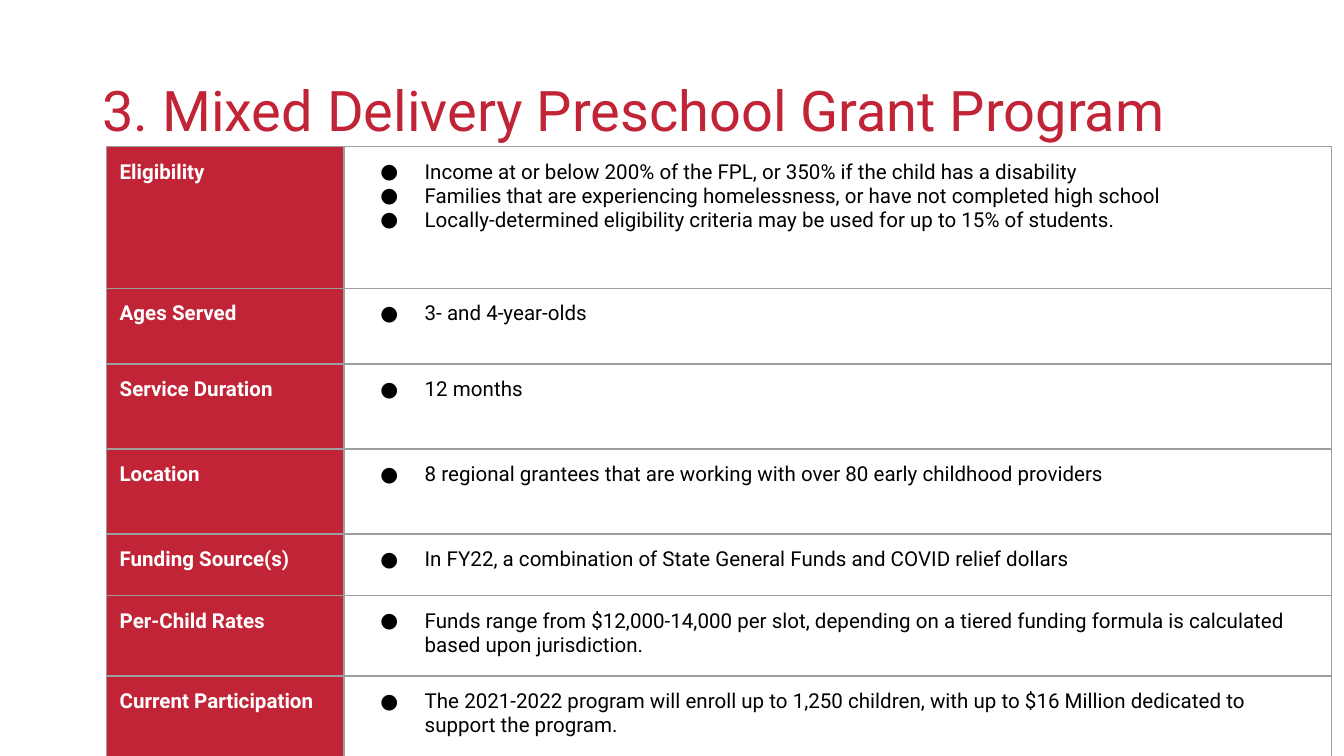
from lxml.etree import SubElement
from pptx import Presentation
from pptx.dml.color import RGBColor
from pptx.enum.text import MSO_ANCHOR as Anchor
from pptx.oxml import parse_xml
from pptx.oxml.ns import nsdecls, qn
from pptx.util import Inches, Pt

SLIDE_WIDTH = 10
SLIDE_HEIGHT = SLIDE_WIDTH * 9 / 16
RED, WHITE, BLACK, GREY = "C12436", "FFFFFF", "000000", "9E9E9E"
FONT = "Roboto"
TABLE_TEXT_SIZE = 11
COLUMN_SHARES = [17.7, 73.5]

PROGRAM_FACTS = [
    ("Eligibility", 18.75, [
        "Income at or below 200% of the FPL, or 350% if the child has a disability",
        "Families that are experiencing homelessness, or have not completed high school",
        "Locally-determined eligibility criteria may be used for up to 15% of students.",
    ]),
    ("Ages Served", 10, ["3- and 4-year-olds"]),
    ("Service Duration", 11.25, ["12 months"]),
    ("Location", 11.25, [
        "8 regional grantees that are working with over 80 early childhood providers",
    ]),
    ("Funding Source(s)", 8.15, [
        "In FY22, a combination of State General Funds and COVID relief dollars",
    ]),
    ("Per-Child Rates", 10.65, [
        "Funds range from $12,000-14,000 per slot, depending on a tiered funding "
        "formula is calculated based upon jurisdiction.",
    ]),
    ("Current Participation", 10.65, [
        "The 2021-2022 program will enroll up to 1,250 children, with up to "
        "$16 Million dedicated to support the program.",
    ]),
]


def across(percent):
    return Inches(SLIDE_WIDTH * percent / 100)


def down(percent):
    return Inches(SLIDE_HEIGHT * percent / 100)


def color(hex_value):
    return RGBColor.from_string(hex_value)


def style_text(paragraph, size, hex_value, bold=False):
    paragraph.font.name = FONT
    paragraph.font.size = Pt(size)
    paragraph.font.bold = bold
    paragraph.font.color.rgb = color(hex_value)


def add_bullet(paragraph):
    properties = paragraph._p.get_or_add_pPr()
    properties.set("marL", str(Inches(0.5)))
    properties.set("indent", str(Inches(-0.33)))
    bullet_color = SubElement(properties, qn("a:buClr"))
    SubElement(bullet_color, qn("a:srgbClr"), val=BLACK)
    SubElement(properties, qn("a:buSzPts"), val=str(TABLE_TEXT_SIZE * 100))
    SubElement(properties, qn("a:buFont"), typeface=FONT)
    SubElement(properties, qn("a:buChar"), char="●")


def add_borders(cell):
    properties = cell._tc.get_or_add_tcPr()
    for position, side in enumerate(("lnL", "lnR", "lnT", "lnB")):
        border = parse_xml(
            f'<a:{side} {nsdecls("a")} w="{Pt(0.75)}"><a:solidFill>'
            f'<a:srgbClr val="{GREY}"/></a:solidFill></a:{side}>'
        )
        properties.insert(position, border)


def fill_cell(cell, lines, fill, text_color, bold=False, bulleted=False):
    cell.margin_left = cell.margin_right = Inches(0.1)
    cell.margin_top = cell.margin_bottom = Inches(0.1)
    cell.fill.solid()
    cell.fill.fore_color.rgb = color(fill)
    add_borders(cell)
    cell.text = "\n".join(lines)
    for paragraph in cell.text_frame.paragraphs:
        if bulleted:
            add_bullet(paragraph)
        style_text(paragraph, TABLE_TEXT_SIZE, text_color, bold)


def add_title(slide, text):
    box = slide.shapes.add_textbox(across(6.9), down(5.3), across(86.2), down(19.4))
    frame = box.text_frame
    frame.word_wrap = True
    frame.vertical_anchor = Anchor.MIDDLE
    frame.margin_left = frame.margin_right = Inches(0.07)
    frame.margin_top = frame.margin_bottom = Inches(0.04)
    paragraph = frame.paragraphs[0]
    paragraph.text = text
    paragraph.line_spacing = 0.9
    style_text(paragraph, 30, RED)


def add_facts_table(slide, facts):
    height = sum(share for _, share, _ in facts)
    table = slide.shapes.add_table(
        len(facts), len(COLUMN_SHARES), across(7.9), down(19.4),
        across(sum(COLUMN_SHARES)), down(height),
    ).table
    table.first_row = table.horz_banding = False
    for column, share in zip(table.columns, COLUMN_SHARES):
        column.width = across(share)
    for row, (label, share, details) in zip(table.rows, facts):
        row.height = down(share)
        label_cell, detail_cell = row.cells
        fill_cell(label_cell, [label], RED, WHITE, bold=True)
        fill_cell(detail_cell, details, WHITE, BLACK, bulleted=True)


def main():
    presentation = Presentation()
    presentation.slide_width = Inches(SLIDE_WIDTH)
    presentation.slide_height = Inches(SLIDE_HEIGHT)
    slide = presentation.slides.add_slide(presentation.slide_layouts[6])
    add_title(slide, "3. Mixed Delivery Preschool Grant Program")
    add_facts_table(slide, PROGRAM_FACTS)
    presentation.save("out.pptx")


if __name__ == "__main__":
    main()
